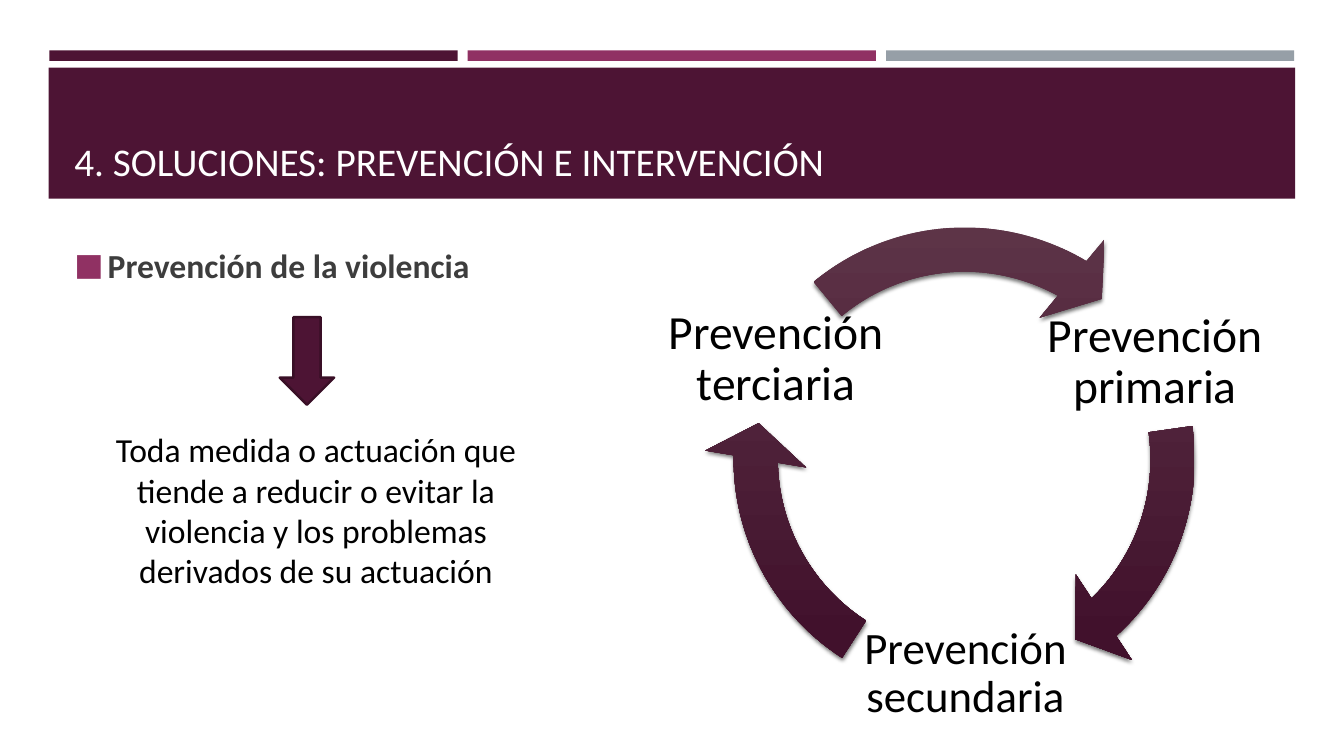
from dataclasses import dataclass, field
from typing import Any

from lxml.etree import SubElement
from pptx import Presentation
from pptx.dml.color import RGBColor
from pptx.enum.shapes import MSO_SHAPE
from pptx.enum.text import MSO_ANCHOR, PP_ALIGN
from pptx.oxml.ns import qn
from pptx.shapes.autoshape import Shape
from pptx.slide import Slide
from pptx.util import Pt

Box = tuple[float, float, float, float]

PLUM = "4D1434"
ROSE = "903163"
GREY = "969FA7"
BLACK = "000000"
FACE = "Calibri"
RING = 380.16


@dataclass
class Block:
    kind: MSO_SHAPE
    box: Box
    fill: str
    line: str = ""


@dataclass
class Label:
    text: str
    box: Box
    size: float
    color: str = BLACK
    bold: bool = False
    inset: Box = (7.2, 3.6, 7.2, 3.6)
    frame: dict[str, Any] = field(default_factory=dict)
    para: dict[str, Any] = field(default_factory=dict)
    mark: str = ""


@dataclass
class Arc:
    left: float
    top: float
    end: float
    start: float


def tint(code: str) -> RGBColor:
    return RGBColor.from_string(code)


def apply(target: Any, values: dict[str, Any]) -> None:
    for name, value in values.items():
        setattr(target, name, value)


def place(slide: Slide, kind: MSO_SHAPE, box: Box) -> Shape:
    shape = slide.shapes.add_shape(kind, *map(Pt, box))
    shape.shadow.inherit = False
    return shape


def draw_block(slide: Slide, block: Block) -> None:
    shape = place(slide, block.kind, block.box)
    shape.fill.solid()
    shape.fill.fore_color.rgb = tint(block.fill)
    if block.line:
        shape.line.color.rgb = tint(block.line)
        shape.line.width = Pt(1.75)
    else:
        shape.line.fill.background()


def add_mark(para: Any, color: str) -> None:
    props = para._p.get_or_add_pPr()
    props.set("marL", str(Pt(23.76)))
    props.set("indent", str(-Pt(23.76)))
    hue = SubElement(props, qn("a:buClr"))
    SubElement(hue, qn("a:srgbClr"), val=color)
    SubElement(props, qn("a:buSzPct"), val="92000")
    SubElement(props, qn("a:buFont"), typeface=FACE)
    SubElement(props, qn("a:buChar"), char="■")


def draw_label(slide: Slide, label: Label) -> None:
    frame = slide.shapes.add_textbox(*map(Pt, label.box)).text_frame
    sides = ("margin_left", "margin_top", "margin_right", "margin_bottom")
    apply(frame, {"word_wrap": True, **dict(zip(sides, map(Pt, label.inset))), **label.frame})
    para = frame.paragraphs[0]
    apply(para, label.para)
    if label.mark:
        add_mark(para, label.mark)
    run = para.add_run()
    run.text = label.text
    apply(run.font, {"name": FACE, "size": Pt(label.size), "bold": label.bold})
    run.font.color.rgb = tint(label.color)


def add_shade(shape: Shape) -> None:
    effects = shape._element.spPr.find(qn("a:effectLst"))
    shade = SubElement(effects, qn("a:outerShdw"), blurRad=str(Pt(3)), dist=str(Pt(2)),
                       dir="5400000", algn="ctr", rotWithShape="0")
    hue = SubElement(shade, qn("a:srgbClr"), val=BLACK)
    SubElement(hue, qn("a:alpha"), val="55000")


def draw_arc(slide: Slide, arc: Arc) -> None:
    shape = place(slide, MSO_SHAPE.CIRCULAR_ARROW, (arc.left, arc.top, RING, RING))
    for spot, value in enumerate((0.083, 5.764, arc.end, arc.start, 0.096)):
        shape.adjustments[spot] = value
    shape.fill.gradient()
    shape.fill.gradient_angle = 270
    for stop, (point, code) in zip(shape.fill.gradient_stops, ((0, "5F3649"), (0.84, "41112C"))):
        stop.position = point
        stop.color.rgb = tint(code)
    shape.line.fill.background()
    add_shade(shape)


def ring_label(text: str, box: Box, size: float, inset: float) -> Label:
    return Label(text, box, size, inset=(inset,) * 4,
                 frame={"vertical_anchor": MSO_ANCHOR.MIDDLE},
                 para={"alignment": PP_ALIGN.CENTER, "line_spacing": 0.9,
                       "space_after": Pt(0.35 * size)})


BARS = [Block(MSO_SHAPE.RECTANGLE, (35.28 + 298.8 * spot, 36, 291.6, 7.5), code)
        for spot, code in enumerate((PLUM, ROSE, GREY))]
BLOCKS = BARS + [
    Block(MSO_SHAPE.RECTANGLE, (34.8, 48.4, 890.4, 93.6), PLUM),
    Block(MSO_SHAPE.DOWN_ARROW, (199.8, 226.6, 38.9, 62.6), PLUM, "390F26"),
]
ARCS = [
    Arc(493.9, 138.2, 28.279, 211.119),
    Arc(503.3, 137.5, 107.938, 73.711),
    Arc(499, 141.8, 179.987, 138.248),
]
LABELS = [
    Label("4. SOLUCIONES: PREVENCIÓN E INTERVENCIÓN", (46.1, 55.4, 868.3, 79.9), 28, "FFFFFF",
          frame={"vertical_anchor": MSO_ANCHOR.BOTTOM}),
    Label("Prevención de la violencia", (46.1, 171.4, 868.3, 289.4), 24, "3D3D3D", True,
          para={"space_before": Pt(4.8), "space_after": Pt(6)}, mark=ROSE),
    Label("Toda medida o actuación que tiende a reducir o evitar la violencia "
          "y los problemas derivados de su actuación", (54.7, 303.1, 342, 123.8), 24,
          para={"alignment": PP_ALIGN.CENTER}),
    ring_label("Prevención primaria", (744.5, 211.7, 161.3, 95), 34, 3.4),
    ring_label("Prevención secundaria", (609.1, 401, 161.3, 161.3), 32, 3.2),
    ring_label("Prevención terciaria", (473.8, 211.7, 161.3, 90.7), 34, 3.4),
]


def main() -> None:
    deck = Presentation()
    apply(deck, {"slide_width": Pt(960), "slide_height": Pt(540)})
    slide = deck.slides.add_slide(deck.slide_layouts[6])
    for block in BLOCKS:
        draw_block(slide, block)
    for arc in ARCS:
        draw_arc(slide, arc)
    for label in LABELS:
        draw_label(slide, label)
    deck.save("out.pptx")


if __name__ == "__main__":
    main()
